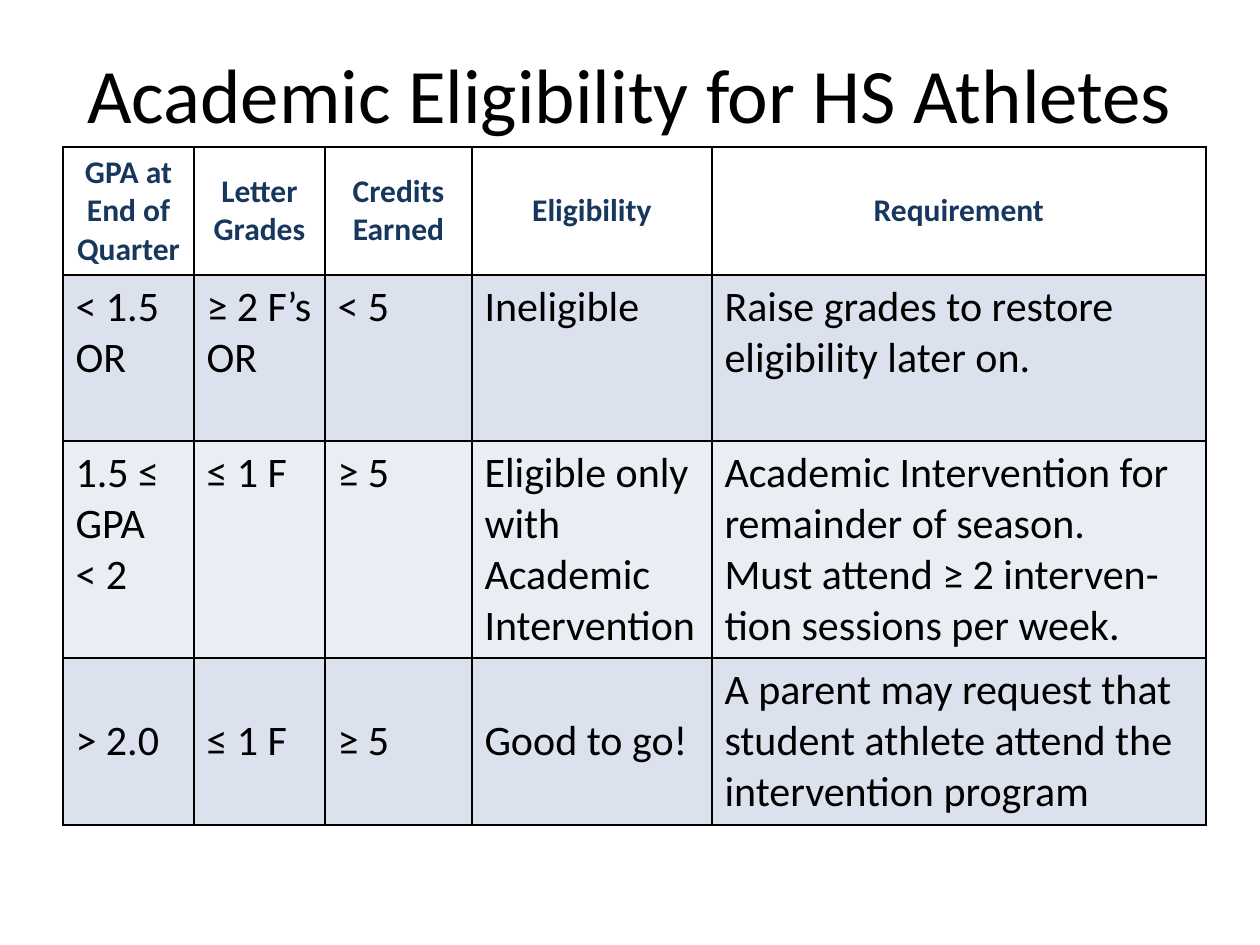
import pptx
import pptx.dml.color
import pptx.enum.text
import pptx.oxml
import pptx.oxml.ns
import pptx.util

PX = 914400 / 126
FONT = "Calibri"
COLORS = {
    "ink": "000000",
    "header": "17375E",
    "band": "D0D8E8",
    "plain": "E9EDF4",
}
ALIGN = pptx.enum.text.PP_ALIGN
ANCHOR = pptx.enum.text.MSO_ANCHOR

COLUMN_WIDTHS = [131, 131, 147, 240, 494]
HEADERS = ["GPA at End of Quarter", "Letter Grades", "Credits Earned",
           "Eligibility", "Requirement"]
# Each level: height, fill, opacity in percent, anchor, cell texts
LEVELS = [
    (166, "band", 75, ANCHOR.TOP,
     ["< 1.5\nOR", "≥ 2 F’s\nOR", "< 5", "Ineligible",
      "Raise grades to restore eligibility later on."]),
    (217, "plain", 100, ANCHOR.TOP,
     ["1.5 ≤ GPA\n< 2", "≤ 1 F", "≥ 5",
      "Eligible only with Academic Intervention",
      "Academic Intervention for remainder of season.\n"
      "Must attend ≥ 2 interven-tion sessions per week."]),
    (167, "band", 75, ANCHOR.MIDDLE,
     ["> 2.0", "≤ 1 F", "≥ 5", "Good to go!",
      "A parent may request that student athlete attend the "
      "intervention program"]),
]


def px(length):
    return pptx.util.Emu(round(length * PX))


def rgb(name):
    return pptx.dml.color.RGBColor.from_string(COLORS[name])


def write_text(frame, text, size, color, align, bold=False):
    frame.text = text
    frame.word_wrap = True
    for para in frame.paragraphs:
        para.alignment = align
        for span in para.runs:
            span.font.name = FONT
            span.font.size = pptx.util.Pt(size)
            span.font.bold = bold
            span.font.color.rgb = rgb(color)


def add_title(page, text):
    box = page.shapes.add_textbox(px(63), px(38), px(1134), px(110))
    write_text(box.text_frame, text, 44, "ink", ALIGN.CENTER)
    box.text_frame.vertical_anchor = ANCHOR.MIDDLE


def set_borders(cell):
    """Draw 1 pt lines on all sides; they must precede the fill."""
    properties = cell._tc.get_or_add_tcPr()
    for index, side in enumerate(("lnL", "lnR", "lnT", "lnB")):
        line = pptx.oxml.parse_xml(
            f'<a:{side} {pptx.oxml.ns.nsdecls("a")} w="12700"><a:solidFill>'
            f'<a:srgbClr val="{COLORS["ink"]}"/></a:solidFill></a:{side}>')
        properties.insert(index, line)


def set_fill(cell, color, opacity):
    cell.fill.solid()
    cell.fill.fore_color.rgb = rgb(color)
    if opacity < 100:
        tint = cell._tc.tcPr.find(".//" + pptx.oxml.ns.qn("a:srgbClr"))
        tint.append(pptx.oxml.parse_xml(
            f'<a:alpha {pptx.oxml.ns.nsdecls("a")} val="{opacity * 1000}"/>'))


def add_eligibility_table(page):
    heights = [128] + [level[0] for level in LEVELS]
    table = page.shapes.add_table(
        len(heights), len(COLUMN_WIDTHS), px(63), px(147),
        px(sum(COLUMN_WIDTHS)), px(sum(heights))).table
    table.first_row = False
    table.horz_banding = False
    for column, width in zip(table.columns, COLUMN_WIDTHS):
        column.width = px(width)
    for row, height in zip(table.rows, heights):
        row.height = px(height)

    # Header row
    for cell, text in zip(table.rows[0].cells, HEADERS):
        write_text(cell.text_frame, text, 18, "header", ALIGN.CENTER, True)
        cell.vertical_anchor = ANCHOR.MIDDLE
        cell.fill.background()
        set_borders(cell)

    # One row per eligibility level
    for index, (_, color, opacity, anchor, texts) in enumerate(LEVELS, 1):
        for cell, text in zip(table.rows[index].cells, texts):
            write_text(cell.text_frame, text, 24, "ink", ALIGN.LEFT)
            cell.vertical_anchor = anchor
            set_fill(cell, color, opacity)
            set_borders(cell)


def main():
    deck = pptx.Presentation()
    deck.slide_width = px(1260)
    deck.slide_height = px(945)
    page = deck.slides.add_slide(deck.slide_layouts[6])
    add_title(page, "Academic Eligibility for HS Athletes")
    add_eligibility_table(page)
    deck.save("out.pptx")


if __name__ == "__main__":
    main()
